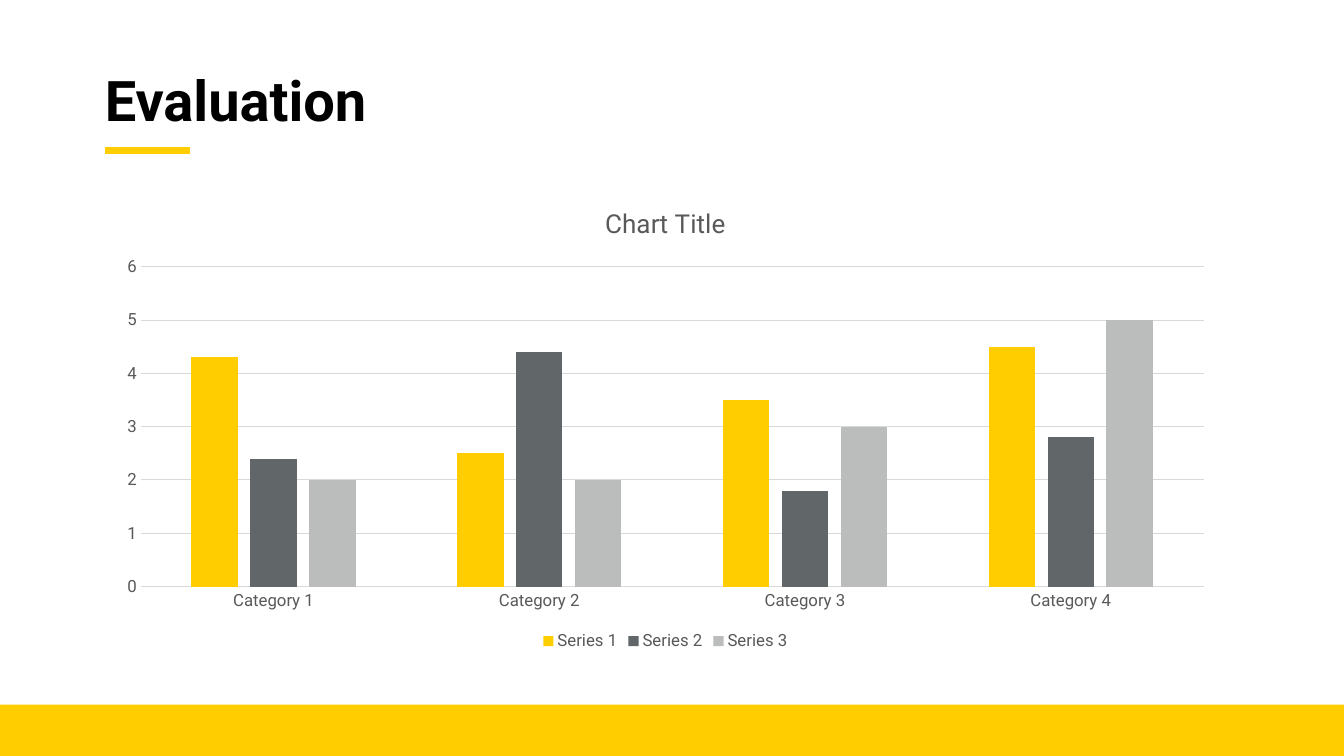
from pptx import Presentation
from pptx.chart.data import CategoryChartData
from pptx.dml.color import RGBColor
from pptx.enum.chart import XL_CHART_TYPE, XL_LEGEND_POSITION, XL_TICK_MARK
from pptx.enum.shapes import MSO_CONNECTOR, MSO_SHAPE
from pptx.enum.text import MSO_ANCHOR
from pptx.oxml.ns import qn
from pptx.util import Inches, Pt
from lxml import etree

COLUMN_CLUSTERED = XL_CHART_TYPE.COLUMN_CLUSTERED
LEGEND_BOTTOM = XL_LEGEND_POSITION.BOTTOM
TICK_NONE = XL_TICK_MARK.NONE
STRAIGHT = MSO_CONNECTOR.STRAIGHT
RECTANGLE = MSO_SHAPE.RECTANGLE
MIDDLE = MSO_ANCHOR.MIDDLE

YELLOW = RGBColor(0xFF, 0xCD, 0x00)
SLATE = RGBColor(0x61, 0x66, 0x69)
SILVER = RGBColor(0xBB, 0xBC, 0xBC)
GRID = RGBColor(0xD9, 0xD9, 0xD9)
LABEL = RGBColor(0x59, 0x59, 0x59)
BLACK = RGBColor(0x00, 0x00, 0x00)

FONT = "Roboto"
LEFT = Inches(1.04)
CATEGORIES = [f"Category {n}" for n in range(1, 5)]
SERIES = [
    ("Series 1", (4.3, 2.5, 3.5, 4.5), YELLOW),
    ("Series 2", (2.4, 4.4, 1.8, 2.8), SLATE),
    ("Series 3", (2, 2, 3, 5), SILVER),
]


def set_font(font, size, color, bold=False):
    """Apply the slide typeface with a size, colour and weight."""
    font.name = FONT
    font.size = Pt(size)
    font.bold = bold
    font.color.rgb = color


def set_line(line, color, width):
    """Give a line a solid colour and a width in points."""
    line.color.rgb = color
    line.width = Pt(width)


def add_footer_band(s):
    """Draw the band along the foot of the slide."""
    sp = s.shapes.add_shape(RECTANGLE, 0, Inches(6.99), Inches(13.33), Inches(0.51))
    sp.shadow.inherit = False
    sp.fill.solid()
    sp.fill.fore_color.rgb = YELLOW
    sp.line.fill.background()


def add_title_rule(s):
    """Draw the short rule under the title."""
    y = Inches(1.49)
    rule = s.shapes.add_connector(STRAIGHT, LEFT, y, Inches(1.88), y)
    set_line(rule.line, YELLOW, 5)
    etree.SubElement(rule._element.spPr, qn("a:effectLst"))


def add_title(s, text):
    """Write the slide title."""
    tf = s.shapes.add_textbox(LEFT, Inches(0.54), Inches(5.75), Inches(0.98)).text_frame
    tf.word_wrap = True
    tf.vertical_anchor = MIDDLE
    tf.margin_left = tf.margin_right = tf.margin_top = tf.margin_bottom = 0
    p = tf.paragraphs[0]
    p.text = text
    p.line_spacing = 0.9
    set_font(p.font, 40, BLACK, bold=True)


def style_axis(axis):
    """Set the labels and tick marks of an axis."""
    axis.major_tick_mark = axis.minor_tick_mark = TICK_NONE
    set_font(axis.tick_labels.font, 12, LABEL)


def add_column_chart(s):
    """Add the clustered column chart."""
    data = CategoryChartData()
    data.categories = CATEGORIES
    for name, values, _ in SERIES:
        data.add_series(name, values)
    chart = s.shapes.add_chart(
        COLUMN_CLUSTERED, LEFT, Inches(1.85), Inches(11.12), Inches(4.65), data
    ).chart
    set_font(chart.font, 10, BLACK)

    chart.has_title = True
    p = chart.chart_title.text_frame.paragraphs[0]
    p.text = "Chart Title"
    set_font(p.font, 18.6, LABEL)
    chart.chart_title.include_in_layout = False

    chart.has_legend = True
    chart.legend.position = LEGEND_BOTTOM
    chart.legend.include_in_layout = False
    set_font(chart.legend.font, 12, LABEL)

    style_axis(chart.category_axis)
    set_line(chart.category_axis.format.line, GRID, 0.75)
    value_axis = chart.value_axis
    style_axis(value_axis)
    value_axis.minimum_scale, value_axis.maximum_scale = 0, 6
    value_axis.major_unit = 1
    value_axis.format.line.fill.background()
    value_axis.has_major_gridlines = True
    set_line(value_axis.major_gridlines.format.line, GRID, 0.75)

    plot = chart.plots[0]
    plot.vary_by_categories = False
    plot.gap_width = 219
    plot.overlap = -27
    for series, (_, _, color) in zip(plot.series, SERIES):
        series.format.fill.solid()
        series.format.fill.fore_color.rgb = color


def main():
    """Build the slide and save it."""
    prs = Presentation()
    prs.slide_width = Inches(13.33)
    prs.slide_height = Inches(7.5)
    s = prs.slides.add_slide(prs.slide_layouts[6])
    add_footer_band(s)
    add_title_rule(s)
    add_title(s, "Evaluation")
    add_column_chart(s)
    prs.save("out.pptx")


if __name__ == "__main__":
    main()
